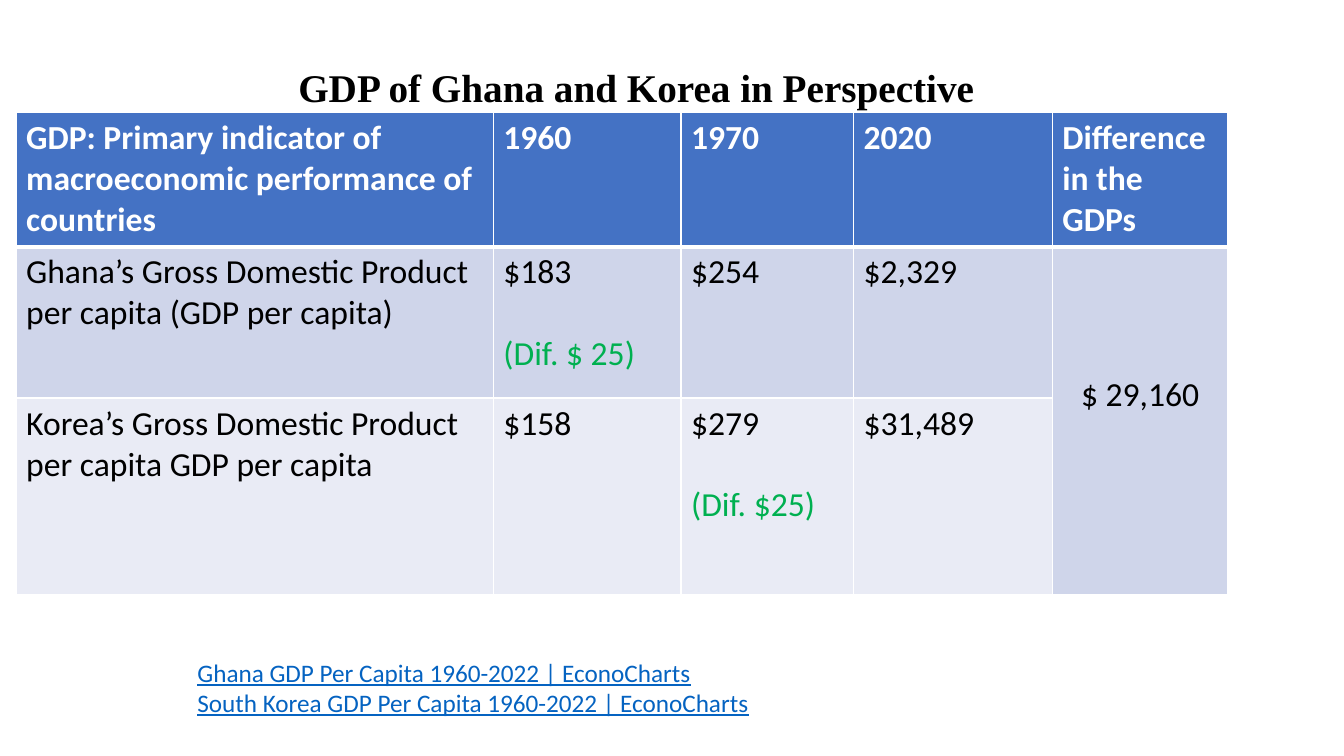
from dataclasses import dataclass

from lxml import etree
from pptx import Presentation
from pptx import util as u
from pptx.dml.color import RGBColor
from pptx.enum import text
from pptx.oxml import ns


@dataclass(frozen=True)
class Theme:
    title_font: str = "Times New Roman"
    body_font: str = "Calibri"
    title_size: int = 28
    table_size: int = 24
    link_size: int = 18
    ink: str = "000000"
    paper: str = "FFFFFF"
    header: str = "4472C4"
    bands: tuple = ("CFD5EA", "E9EBF5")
    difference: str = "00B050"
    link: str = "0563C1"
    rule: int = 1
    header_rule: int = 3


THEME = Theme()
SLIDE_WIDTH, SLIDE_HEIGHT = u.Inches(13.33), u.Inches(7.5)

# Boxes are left, top, width and height in percent of the slide.
TITLE_BOX = (3, 5.33, 90.17, 13.2)
TABLE_BOX = (1.2, 14.93, 90.17, 63.73)
LINKS_BOX = (13.95, 86.27, 58.96, 9.47)

COLUMN_WEIGHTS = (4.73, 1.86, 1.71, 1.97, 1.74)
ROW_WEIGHTS = (1.33, 1.5, 1.95)

HEADINGS = (
    "GDP: Primary indicator of macroeconomic performance of countries",
    "1960", "1970", "2020", "Difference in the GDPs",
)
# Each cell holds a value and, where one applies, a note on the difference.
COUNTRIES = (
    (("Ghana’s Gross Domestic Product per capita (GDP per capita)",),
     ("$183", "(Dif. $ 25)"), ("$254",), ("$2,329",)),
    (("Korea’s Gross Domestic Product per capita GDP per capita",),
     ("$158",), ("$279", "(Dif. $25)"), ("$31,489",)),
)
TOTAL_DIFFERENCE = "$ 29,160"
LINKS = (
    "Ghana GDP Per Capita 1960-2022 | EconoCharts",
    "South Korea GDP Per Capita 1960-2022 | EconoCharts",
)


def place(box):
    """Turn percentages of the slide into lengths."""
    sides = (SLIDE_WIDTH, SLIDE_HEIGHT) * 2
    return [round(share * side / 100) for share, side in zip(box, sides)]


def add_run(paragraph, words, size, color, font=THEME.body_font,
            bold=False, underline=False):
    run = paragraph.add_run()
    run.text = words
    run.font.name = font
    run.font.size = u.Pt(size)
    run.font.bold = bold
    run.font.underline = underline
    run.font.color.rgb = RGBColor.from_string(color)


def add_title(slide, box):
    title = slide.shapes.title
    title.left, title.top, title.width, title.height = place(box)
    frame = title.text_frame
    frame.auto_size = text.MSO_AUTO_SIZE.NONE
    frame.vertical_anchor = text.MSO_ANCHOR.MIDDLE
    frame.margin_right = u.Inches(0.3)
    paragraph = frame.paragraphs[0]
    paragraph.alignment = text.PP_ALIGN.CENTER
    paragraph.line_spacing = 0.9
    add_run(paragraph, "GDP of Ghana and Korea in Perspective",
            THEME.title_size, THEME.ink, THEME.title_font, bold=True)


def style_cell(cell, fill, top=THEME.rule, bottom=THEME.rule):
    """Rule the four sides of a cell, then fill it."""
    properties = cell._tc.get_or_add_tcPr()
    sides = {"L": THEME.rule, "R": THEME.rule, "T": top, "B": bottom}
    for side, width in sides.items():
        line = etree.SubElement(properties, ns.qn(f"a:ln{side}"), w=str(u.Pt(width)))
        solid = etree.SubElement(line, ns.qn("a:solidFill"))
        etree.SubElement(solid, ns.qn("a:srgbClr"), val=THEME.paper)
    cell.fill.solid()
    cell.fill.fore_color.rgb = RGBColor.from_string(fill)


def fill_header(table):
    for column, heading in enumerate(HEADINGS):
        cell = table.cell(0, column)
        style_cell(cell, THEME.header, bottom=THEME.header_rule)
        add_run(cell.text_frame.paragraphs[0], heading,
                THEME.table_size, THEME.paper, bold=True)


def fill_country(table, row, entries, band):
    top = THEME.header_rule if row == 1 else THEME.rule
    for column, (value, *notes) in enumerate(entries):
        cell = table.cell(row, column)
        style_cell(cell, band, top=top)
        frame = cell.text_frame
        add_run(frame.paragraphs[0], value, THEME.table_size, THEME.ink)
        for note in notes:
            paragraph = frame.add_paragraph()
            paragraph.space_before = u.Pt(29)
            add_run(paragraph, note, THEME.table_size, THEME.difference)


def fill_total(table):
    """Merge the last column below its heading and show the difference."""
    last = len(HEADINGS) - 1
    cell = table.cell(1, last)
    cell.merge(table.cell(len(COUNTRIES), last))
    style_cell(cell, THEME.bands[0], top=THEME.header_rule)
    cell.vertical_anchor = text.MSO_ANCHOR.MIDDLE
    cell.margin_bottom = u.Inches(0.55)
    paragraph = cell.text_frame.paragraphs[0]
    paragraph.alignment = text.PP_ALIGN.CENTER
    add_run(paragraph, TOTAL_DIFFERENCE, THEME.table_size, THEME.ink)


def add_gdp_table(slide, box):
    left, top, width, height = place(box)
    table = slide.shapes.add_table(
        len(ROW_WEIGHTS), len(COLUMN_WEIGHTS), left, top, width, height).table
    for column, weight in zip(table.columns, COLUMN_WEIGHTS):
        column.width = round(width * weight / sum(COLUMN_WEIGHTS))
    for row, weight in zip(table.rows, ROW_WEIGHTS):
        row.height = round(height * weight / sum(ROW_WEIGHTS))
    fill_header(table)
    for row, (entries, band) in enumerate(zip(COUNTRIES, THEME.bands), start=1):
        fill_country(table, row, entries, band)
    fill_total(table)


def add_links(slide, box):
    frame = slide.shapes.add_textbox(*place(box)).text_frame
    frame.word_wrap = True
    for index, link in enumerate(LINKS):
        paragraph = frame.add_paragraph() if index else frame.paragraphs[0]
        add_run(paragraph, link, THEME.link_size, THEME.link, underline=True)


def main():
    presentation = Presentation()
    presentation.slide_width, presentation.slide_height = SLIDE_WIDTH, SLIDE_HEIGHT
    title_only = presentation.slide_layouts.get_by_name("Title Only")
    slide = presentation.slides.add_slide(title_only)
    add_title(slide, TITLE_BOX)
    add_gdp_table(slide, TABLE_BOX)
    add_links(slide, LINKS_BOX)
    presentation.save("out.pptx")


if __name__ == "__main__":
    main()
